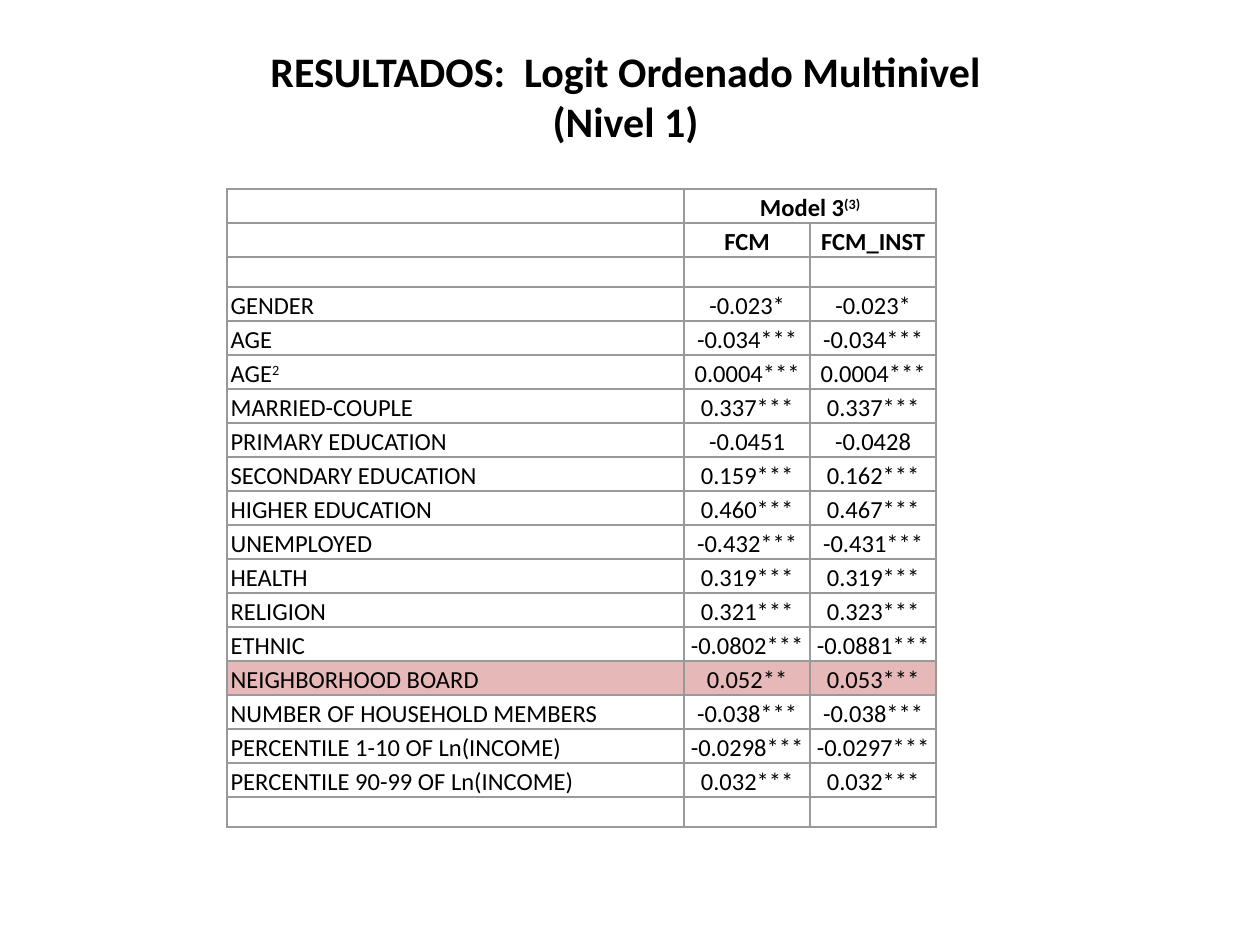
from lxml import etree
from pptx import Presentation
from pptx.dml.color import RGBColor
from pptx.enum.text import MSO_ANCHOR, MSO_AUTO_SIZE, PP_ALIGN
from pptx.oxml.ns import qn
from pptx.util import Inches, Pt

LEFT, CENTER = PP_ALIGN.LEFT, PP_ALIGN.CENTER
TOP = MSO_ANCHOR.TOP
GROW = MSO_AUTO_SIZE.SHAPE_TO_FIT_TEXT
TITLE_ONLY = 5

HIGHLIGHTED = "NEIGHBORHOOD BOARD"
# A caret starts a superscript.
RESULTS = [
    ("", "Model 3^(3)", ""),
    ("", "FCM", "FCM_INST"),
    ("", "", ""),
    ("GENDER", "-0.023*", "-0.023*"),
    ("AGE", "-0.034***", "-0.034***"),
    ("AGE^2", "0.0004***", "0.0004***"),
    ("MARRIED-COUPLE", "0.337***", "0.337***"),
    ("PRIMARY EDUCATION", "-0.0451", "-0.0428"),
    ("SECONDARY EDUCATION", "0.159***", "0.162***"),
    ("HIGHER EDUCATION", "0.460***", "0.467***"),
    ("UNEMPLOYED", "-0.432***", "-0.431***"),
    ("HEALTH", "0.319***", "0.319***"),
    ("RELIGION", "0.321***", "0.323***"),
    ("ETHNIC", "-0.0802***", "-0.0881***"),
    (HIGHLIGHTED, "0.052**", "0.053***"),
    ("NUMBER OF HOUSEHOLD MEMBERS", "-0.038***", "-0.038***"),
    ("PERCENTILE 1-10 OF Ln(INCOME)", "-0.0298***", "-0.0297***"),
    ("PERCENTILE 90-99 OF Ln(INCOME)", "0.032***", "0.032***"),
    ("", "", ""),
]
HEADER_ROWS = 2


def color(hex_code):
    return RGBColor.from_string(hex_code)


class ResultsSlide:
    font, ink, rule, highlight = "Calibri", "000000", "999999", "E6B9B8"
    title_size, body_size = 24, 14

    def __init__(self, prs):
        self.width, self.height = prs.slide_width, prs.slide_height
        self.slide = prs.slides.add_slide(prs.slide_layouts[TITLE_ONLY])

    def box(self, x, y, w, h):
        """Turn shares of the slide's size into lengths."""
        return (round(x * self.width), round(y * self.height),
                round(w * self.width), round(h * self.height))

    def style(self, run, size, bold):
        run.font.name, run.font.size, run.font.bold = self.font, Pt(size), bold
        run.font.color.rgb = color(self.ink)

    def title(self, text, *shares):
        heading = self.slide.shapes.title
        heading.left, heading.top, heading.width, heading.height = self.box(*shares)
        frame = heading.text_frame
        frame.text = text
        frame.word_wrap, frame.auto_size, frame.vertical_anchor = True, GROW, TOP
        for paragraph in frame.paragraphs:
            paragraph.alignment = CENTER
            for run in paragraph.runs:
                self.style(run, self.title_size, True)

    def borders(self, cell):
        properties = cell._tc.get_or_add_tcPr()
        for side in ("a:lnL", "a:lnR", "a:lnT", "a:lnB"):
            line = etree.SubElement(properties, qn(side), w=str(Pt(1)))
            fill = etree.SubElement(line, qn("a:solidFill"))
            etree.SubElement(fill, qn("a:srgbClr"), val=self.rule)

    def cell(self, cell, text, alignment, bold, fill):
        cell.margin_left = cell.margin_right = Inches(0.03)
        cell.margin_top = cell.margin_bottom = 0
        self.borders(cell)
        if fill:
            cell.fill.solid()
            cell.fill.fore_color.rgb = color(fill)
        else:
            cell.fill.background()
        paragraph = cell.text_frame.paragraphs[0]
        paragraph.alignment = alignment
        if not text:
            # An empty cell takes its line height from the end mark.
            paragraph._p.get_or_add_endParaRPr().set("sz", str(self.body_size * 100))
            return
        paragraph.line_spacing = 1.15
        for level, part in enumerate(text.split("^")):
            run = paragraph.add_run()
            run.text = part
            self.style(run, self.body_size, bold)
            if level:
                run.font._element.set("baseline", "30000")

    def table(self, rows, x, y, column_shares, text_row, blank_row):
        heights = [text_row if any(row) else blank_row for row in rows]
        frame = self.slide.shapes.add_table(
            len(rows), len(column_shares),
            *self.box(x, y, sum(column_shares), sum(heights)))
        table = frame.table
        table.first_row = table.horz_banding = False
        for column, share in zip(table.columns, column_shares):
            column.width = round(share * self.width)
        for r, (row, height) in enumerate(zip(rows, heights)):
            table.rows[r].height = round(height * self.height)
            fill = self.highlight if row[0] == HIGHLIGHTED else None
            for c, text in enumerate(row):
                self.cell(table.cell(r, c), text, CENTER if c else LEFT,
                          r < HEADER_ROWS, fill)
        table.cell(0, 1).merge(table.cell(0, 2))


def main():
    prs = Presentation()
    prs.slide_width, prs.slide_height = Inches(10), Inches(7.5)
    page = ResultsSlide(prs)
    page.table(RESULTS, 0.18, 0.2, (0.363, 0.1, 0.1),
               text_row=0.27 / 7.5, blank_row=0.24 / 7.5)
    page.title("RESULTADOS:  Logit Ordenado Multinivel\n(Nivel 1)",
               0.133, 0.31 / 7.5, 0.727, 0.91 / 7.5)
    prs.save("out.pptx")


if __name__ == "__main__":
    main()
